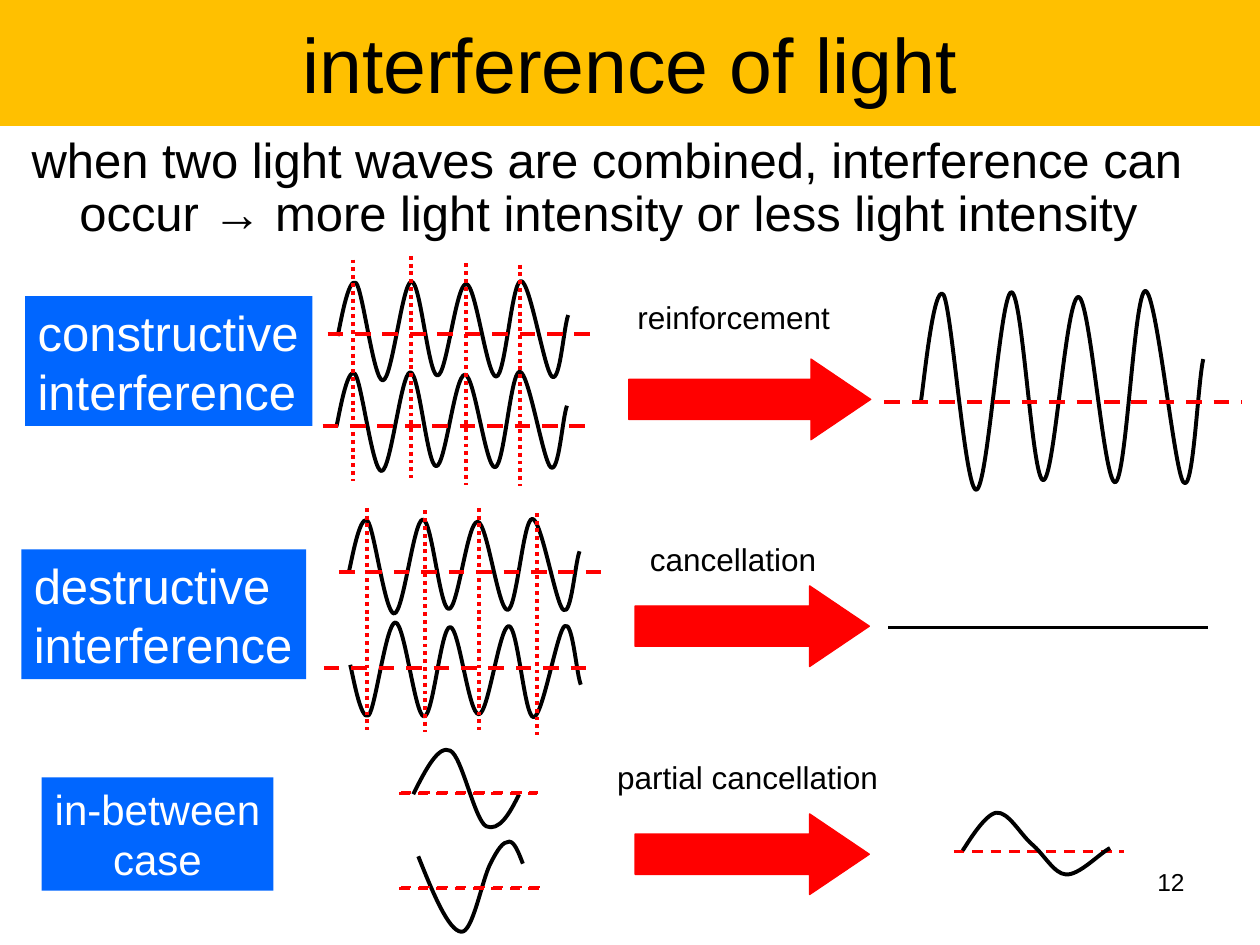
from lxml import etree
from pptx import Presentation
from pptx.dml.color import RGBColor
from pptx.enum import dml, shapes, text
from pptx.oxml.ns import qn
from pptx.util import Inches, Pt

BLACK, WHITE, RED, BLUE, GOLD = "000000", "FFFFFF", "FF0000", "0066FF", "FFC000"
DASH, DOT = dml.MSO_LINE.DASH, dml.MSO_LINE.ROUND_DOT
LONG_WAVE = [
    (0, .56), (.01, .48), (.045, 0), (.08, .065), (.11, .135), (.156, .98), (.196, .975),
    (.237, .97), (.28, .06), (.32, .053), (.36, .047), (.393, .93), (.433, .93),
    (.473, .935), (.513, .07), (.558, .075), (.6, .08), (.647, .945), (.688, .94),
    (.728, .935), (.755, .047), (.795, .047), (.835, .047), (.897, .89), (.93, .94),
    (.965, 1), (.98, .48), (1, .365)]
HUMP = [(0, .57), (.12, .28), (.24, 0), (.35, .07), (.46, .13), (.58, .87),
        (.69, .94), (.81, 1), (.91, .8), (1, .57)]
DIP = [(0, .16), (.14, .56), (.29, .97), (.41, .98), (.52, 1), (.61, .41), (.69, .24),
       (.76, .08), (.81, 0), (.87, 0), (.92, 0), (.96, .12), (1, .24)]
RESULT = [(0, .61), (.03, .51), (.15, .04), (.23, .02), (.31, 0), (.39, .35), (.47, .51),
          (.55, .66), (.62, .97), (.7, .98), (.79, 1), (.93, .65), (1, .57)]


def rgb(value):
    """Return the colour for a hex string."""
    return RGBColor.from_string(value)


def add_runs(tf, lines, size, color, align=None):
    """Write each line as a paragraph with one formatted run."""
    for i, line in enumerate(lines):
        p = tf.add_paragraph() if i else tf.paragraphs[0]
        p.alignment = align
        r = p.add_run()
        r.text = line
        r.font.name, r.font.size = "Arial", Pt(size)
        r.font.color.rgb = rgb(color)


def label(s, box, lines, size, color=BLACK, fill=None, align=None, wrap=False):
    """Add a text box, filled when a colour is given."""
    sp = s.shapes.add_textbox(*map(Inches, box))
    tf = sp.text_frame
    tf.word_wrap = wrap
    if fill:
        sp.fill.solid()
        sp.fill.fore_color.rgb = rgb(fill)
    add_runs(tf, lines, size, color, align)


def line(s, x1, y1, x2, y2, color=RED, width=2.25, dash=None):
    """Add a straight line without a shadow."""
    sp = s.shapes.add_connector(shapes.MSO_CONNECTOR.STRAIGHT, *map(Inches, (x1, y1, x2, y2)))
    sp.line.color.rgb = rgb(color)
    sp.line.width = Pt(width)
    if dash:
        sp.line.dash_style = dash
    etree.SubElement(sp._element.spPr, qn("a:effectLst"))


def wave(s, box, curve, flip=False):
    """Fit a smooth curve, given as Bezier points in a unit square, to a box."""
    x, y, w, h = box
    pts = [(Inches(x + px * w), Inches(y + (1 - py if flip else py) * h)) for px, py in curve]
    builder = s.shapes.build_freeform(*pts[0])
    builder.add_line_segments(pts[1:], close=False)
    sp = builder.convert_to_shape()
    sp.shadow.inherit = False
    sp.fill.background()
    sp.line.color.rgb = rgb(BLACK)
    sp.line.width = Pt(2.25)
    outline = sp._element.find(".//" + qn("a:path"))
    segments = outline.findall(qn("a:lnTo"))
    for i in range(0, len(segments), 3):
        cubic = etree.SubElement(outline, qn("a:cubicBezTo"))
        for segment in segments[i:i + 3]:
            cubic.append(segment[0])
            outline.remove(segment)


def arrow(s, x, y, w):
    """Add a red block arrow."""
    sp = s.shapes.add_shape(shapes.MSO_SHAPE.RIGHT_ARROW, *map(Inches, (x, y, w, .64)))
    sp.shadow.inherit = False
    sp.adjustments[0], sp.adjustments[1] = .5, .74
    sp.fill.solid()
    sp.fill.fore_color.rgb = rgb(RED)
    sp.line.color.rgb = rgb(RED)
    sp.line.width = Pt(.75)


def wave_pair(s, x, y, first, second, axes, guides, flip):
    """Draw two long waves with their axes and upright guides."""
    for (dx, dy, h), flipped in ((first, False), (second, flip)):
        wave(s, (x + dx, y + dy, 1.83, h), LONG_WAVE, flipped)
    for dx, dy in axes:
        line(s, x + dx, y + dy, x + dx + 2.12, y + dy, dash=DASH)
    for dx, dy in guides:
        line(s, x + dx, y + dy, x + dx, y + dy + 1.76, dash=DOT)


def header(s):
    """Place the title band and the introductory sentence."""
    title, body = s.placeholders
    for sp, box in ((title, (0, 0, 10, 1)), (body, (.15, 1.03, 9.67, .97))):
        sp.left, sp.top, sp.width, sp.height = map(Inches, box)
    title.fill.solid()
    title.fill.fore_color.rgb = rgb(GOLD)
    title.text_frame.vertical_anchor = text.MSO_ANCHOR.MIDDLE
    add_runs(title.text_frame, ["interference of light"], 44, BLACK, text.PP_ALIGN.CENTER)
    add_runs(body.text_frame, ["when two light waves are combined, interference can occur "
                               "→ more light intensity or less light intensity"], 28, BLACK)
    p = body.text_frame.paragraphs[0]
    p.line_spacing, p.space_before = .9, Pt(5.6)
    pPr = p._p.get_or_add_pPr()
    pPr.set("marL", str(Inches(.38)))
    pPr.set("indent", str(-Inches(.38)))
    etree.SubElement(pPr, qn("a:buNone"))


def constructive(s, x, y):
    """Draw the row in which the waves reinforce each other."""
    wave_pair(s, x, y, (2.68, .19, .85), (2.67, .91, .85), [(2.6, .65), (2.56, 1.38)],
              [(2.8, .06), (3.26, .03), (3.7, .09), (4.13, .1)], False)
    label(s, (x + .2, y + .35, 2.28, 1.03), ["constructive", "interference"], 28, WHITE, BLUE)
    label(s, (x + 4.96, y + .32, 1.73, .4), ["reinforcement"], 18, fill=WHITE)
    arrow(s, x + 4.99, y + .85, 1.92)
    wave(s, (x + 7.31, y + .23, 2.24, 1.7), LONG_WAVE)
    line(s, x + 7.02, y + 1.19, x + 9.86, y + 1.19, dash=DASH)


def destructive(s, x, y):
    """Draw the row in which the waves cancel out."""
    wave_pair(s, x, y, (2.77, .08, .81), (2.78, .92, .81), [(2.69, .54), (2.57, 1.3)],
              [(2.91, .03), (3.37, .05), (3.8, .03), (4.26, .07)], True)
    label(s, (x + .17, y + .36, 2.26, 1.03), ["destructive", "interference"], 28, WHITE, BLUE)
    label(s, (x + 5.06, y + .24, 1.52, .4), ["cancellation"], 18)
    arrow(s, x + 5.04, y + .65, 1.86)
    line(s, x + 7.05, y + .98, x + 9.59, y + .98, BLACK)


def in_between(s, x, y):
    """Draw the row in which the waves cancel in part."""
    wave(s, (x + 3.28, y + .01, .84, .69), HUMP)
    wave(s, (x + 3.32, y + .78, .83, .73), DIP)
    for shift in (0, .01):
        for dy, w in ((.4, 1.09), (1.15, 1.12)):
            left, top = x + 3.17 + shift, y + dy - shift
            line(s, left, top, left + w, top, width=1.5, dash=DASH)
    label(s, (x + .33, y + .27, 1.84, .9), ["in-between", "case"], 24, WHITE, BLUE,
          text.PP_ALIGN.CENTER)
    label(s, (x + 4.8, y + .07, 2.27, .4), ["partial cancellation"], 18)
    arrow(s, x + 5.04, y + .56, 1.86)
    line(s, x + 7.57, y + .86, x + 8.92, y + .86, width=1.5, dash=DASH)
    wave(s, (x + 7.64, y + .54, 1.17, .51), RESULT)


def main():
    """Build and save the slide."""
    prs = Presentation()
    prs.slide_width, prs.slide_height = Inches(10), Inches(7.5)
    s = prs.slides.add_slide(prs.slide_layouts[1])
    header(s)
    constructive(s, 0, 2)
    destructive(s, 0, 4)
    in_between(s, 0, 5.9)
    label(s, (7.17, 6.83, 2.33, .52), ["12"], 14, align=text.PP_ALIGN.RIGHT, wrap=True)
    prs.save("out.pptx")


if __name__ == "__main__":
    main()
